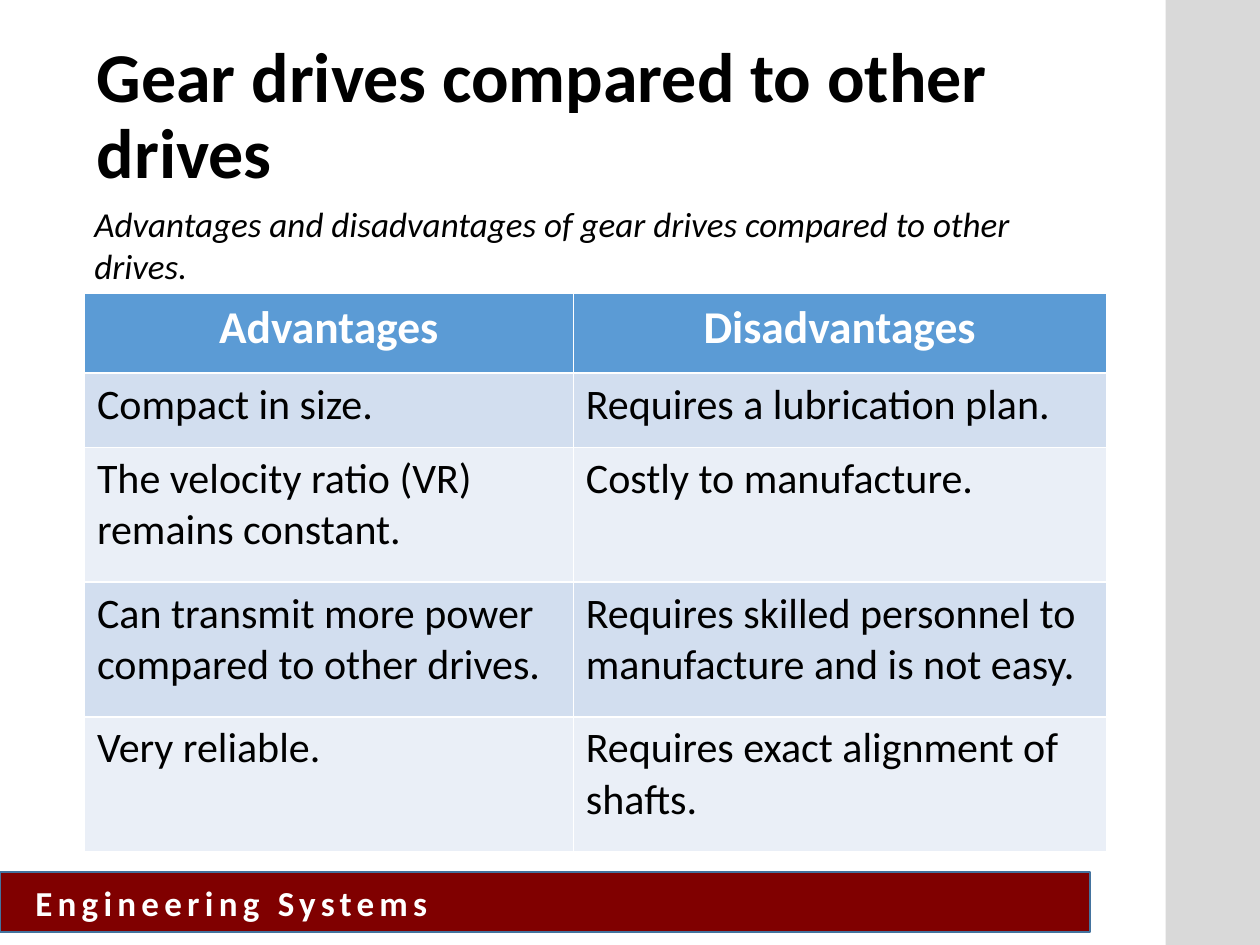
"""Build a slide that compares gear drives with other drives."""
import pptx
import pptx.dml.color
import pptx.enum.shapes
import pptx.enum.text
import pptx.util

Inches = pptx.util.Inches
RGB = pptx.dml.color.RGBColor.from_string
ALIGN = pptx.enum.text.PP_ALIGN
MIDDLE = pptx.enum.text.MSO_ANCHOR.MIDDLE
RECT = pptx.enum.shapes.MSO_SHAPE.RECTANGLE
HUES = {
    "red": "800000", "edge": "43739E", "gray": "D9D9D9", "black": "000000",
    "white": "FFFFFF", "head": "5B9BD5", "odd": "D2DEEF", "even": "EAEFF7",
}


def write(frame, text, size, hue="black", align=ALIGN.LEFT, **form):
    frame.word_wrap = True
    para = frame.paragraphs[0]
    para.alignment = align
    run = para.add_run()
    run.text = text
    run.font.color.rgb = RGB(HUES[hue])
    form = {"name": "Calibri", "size": pptx.util.Pt(size), **form}
    for key, value in form.items():
        setattr(run.font, key, value)
    return run


def block(left, top, width, height, hue):
    box = slide.shapes.add_shape(
        RECT, Inches(left), Inches(top), Inches(width), Inches(height))
    box.shadow.inherit = False
    box.fill.solid()
    box.fill.fore_color.rgb = RGB(HUES[hue])
    return box


deck = pptx.Presentation()
deck.slide_width, deck.slide_height = Inches(10), Inches(7.5)
slide = deck.slides.add_slide(deck.slide_layouts[6])

bar = block(0, 6.92, 8.65, 0.48, "red")
bar.line.color.rgb = RGB(HUES["edge"])
bar.line.width = pptx.util.Pt(1)
bar.text_frame.margin_left = Inches(0.28)
bar.text_frame.vertical_anchor = MIDDLE
label = write(bar.text_frame, "Engineering Systems", 20, "white", bold=True)
label.font._element.set("spc", "300")

side = block(9.25, 0, 0.75, 7.5, "gray")
side.line.fill.background()

title = slide.shapes.add_textbox(
    Inches(0.67), Inches(0.21), Inches(8.44), Inches(1.45)).text_frame
title.vertical_anchor = MIDDLE
write(title, "Gear drives compared to other drives", 40, bold=True)
title.paragraphs[0].line_spacing = 0.9

rows = [
    ("Advantages", "Disadvantages"),
    ("Compact in size.", "Requires a lubrication plan."),
    ("The velocity ratio (VR) remains constant.", "Costly to manufacture."),
    ("Can transmit more power compared to other drives.",
     "Requires skilled personnel to manufacture and is not easy."),
    ("Very reliable.", "Requires exact alignment of shafts."),
]
table = slide.shapes.add_table(
    len(rows), 2, Inches(0.67), Inches(2.33), Inches(8.11), Inches(4.43)).table
for col, width in zip(table.columns, (3.88, 4.23)):
    col.width = Inches(width)
for row, high in zip(table.rows, (0.63, 0.59, 1.07, 1.07, 1.07)):
    row.height = Inches(high)
for r, texts in enumerate(rows):
    hue = "head" if r == 0 else "odd" if r % 2 else "even"
    for c, text in enumerate(texts):
        cell = table.cell(r, c)
        cell.fill.solid()
        cell.fill.fore_color.rgb = RGB(HUES[hue])
        if r == 0:
            write(cell.text_frame, text, 26, "white", ALIGN.CENTER, bold=True)
        else:
            write(cell.text_frame, text, 24, bold=False)

note = slide.shapes.add_textbox(
    Inches(0.65), Inches(1.56), Inches(7.68), Inches(0.77)).text_frame
write(note, "Advantages and disadvantages of gear drives compared to other drives.",
      20, italic=True)

deck.save("out.pptx")
